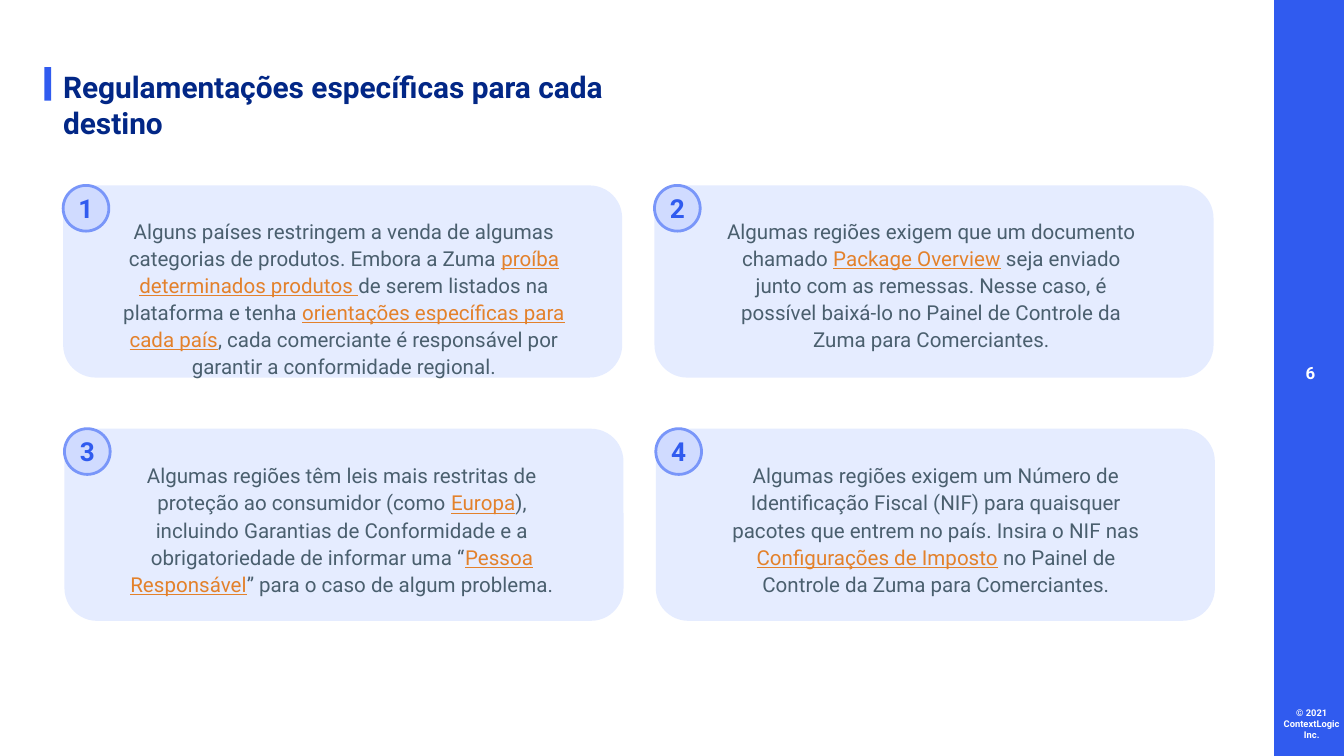
from pptx import Presentation
from pptx.dml.color import RGBColor
from pptx.enum.shapes import MSO_SHAPE
from pptx.enum.text import MSO_ANCHOR, PP_ALIGN
from pptx.util import Inches, Pt

COLORS = {
    "blue": "305BEF",
    "navy": "022786",
    "card": "E5ECFF",
    "badge": "D0DBFF",
    "badge_line": "7996F9",
    "body": "4A5F6E",
    "link": "E3812B",
    "white": "FFFFFF",
}
FONT = "Roboto"
CARD_WIDTH, CARD_HEIGHT = 4.16, 1.43
COLUMN_STEP = 4.4
BADGE_SIZE = 0.34

# Each row: left and top of its first card, top of its texts, and its cards.
# Each card: number, text left, text width, and pieces where every second one is a link.
ROWS = [
    (0.47, 1.38, 1.51, [
        ("1", 0.7, 3.72, [
            "Alguns países restringem a venda de algumas categorias de produtos. Embora a Zuma ",
            "proíba determinados produtos ",
            "de serem listados na plataforma e tenha ",
            "orientações específicas para cada país",
            ", cada comerciante é responsável por garantir a conformidade regional.",
        ]),
        ("2", 5.24, 3.38, [
            "Algumas regiões exigem que um documento chamado ",
            "Package Overview",
            " seja enviado junto com as remessas. Nesse caso, é possível baixá-lo no "
            "Painel de Controle da Zuma para Comerciantes.",
        ]),
    ]),
    (0.48, 3.19, 3.33, [
        ("3", 0.81, 3.47, [
            "Algumas regiões têm leis mais restritas de proteção ao consumidor (como ",
            "Europa",
            "), incluindo Garantias de Conformidade e a obrigatoriedade de informar uma “",
            "Pessoa Responsável",
            "” para o caso de algum problema.",
        ]),
        ("4", 5.23, 3.47, [
            "Algumas regiões exigem um Número de Identificação Fiscal (NIF) para quaisquer "
            "pacotes que entrem no país. Insira o NIF nas ",
            "Configurações de Imposto",
            " no Painel de Controle da Zuma para Comerciantes.",
        ]),
    ]),
]


def rgb(name):
    return RGBColor.from_string(COLORS[name])


def set_font(font, size, color, bold=False):
    font.name = FONT
    font.size = Pt(size)
    font.bold = bold
    font.color.rgb = rgb(color)


def set_margins(frame, left, top, right, bottom):
    frame.margin_left, frame.margin_top = Inches(left), Inches(top)
    frame.margin_right, frame.margin_bottom = Inches(right), Inches(bottom)


def add_filled_shape(slide, kind, left, top, width, height, fill):
    shape = slide.shapes.add_shape(
        kind, Inches(left), Inches(top), Inches(width), Inches(height))
    shape.shadow.inherit = False
    shape.fill.solid()
    shape.fill.fore_color.rgb = rgb(fill)
    shape.line.fill.background()
    return shape


def add_text_frame(slide, left, top, width, height, margins=(0.1, 0.1, 0.1, 0.1)):
    frame = slide.shapes.add_textbox(
        Inches(left), Inches(top), Inches(width), Inches(height)).text_frame
    frame.word_wrap = True
    set_margins(frame, *margins)
    return frame


def add_title(slide, text):
    add_filled_shape(slide, MSO_SHAPE.RECTANGLE, 0.33, 0.5, 0.05, 0.25, "blue")
    title = add_text_frame(slide, 0.47, 0.46, 4.74, 0.34, (0, 0.05, 0, 0)).paragraphs[0]
    title.text = text
    set_font(title.font, 16, "navy", bold=True)


def add_sidebar_text(slide, text, left, top, width, height, size):
    label = add_text_frame(slide, left, top, width, height).paragraphs[0]
    label.text = text
    label.alignment = PP_ALIGN.CENTER
    set_font(label.font, size, "white", bold=True)


def add_sidebar(slide):
    add_filled_shape(slide, MSO_SHAPE.RECTANGLE, 9.48, -0.01, 0.52, 5.66, "blue")
    add_sidebar_text(slide, "6", 9.49, 2.62, 0.52, 0.43, 9)
    add_sidebar_text(slide, "© 2021 ContextLogic Inc.", 9.42, 5.16, 0.68, 0.47, 5)


def add_card_text(slide, left, top, width, pieces):
    paragraph = add_text_frame(slide, left, top, width, 1.2).paragraphs[0]
    paragraph.alignment = PP_ALIGN.CENTER
    paragraph.line_spacing = 1.1
    paragraph.space_after = Pt(8)
    for index, piece in enumerate(pieces):
        is_link = index % 2 == 1
        run = paragraph.add_run()
        run.text = piece
        set_font(run.font, 11, "link" if is_link else "body")
        run.font.underline = is_link


def add_badge(slide, left, top, number):
    badge = add_filled_shape(
        slide, MSO_SHAPE.OVAL, left, top, BADGE_SIZE, BADGE_SIZE, "badge")
    badge.line.color.rgb = rgb("badge_line")
    badge.line.width = Pt(1.5)
    frame = badge.text_frame
    set_margins(frame, 0, 0, 0, 0)
    frame.vertical_anchor = MSO_ANCHOR.MIDDLE
    label = frame.paragraphs[0]
    label.text = number
    label.alignment = PP_ALIGN.CENTER
    set_font(label.font, 14, "blue", bold=True)


def add_card(slide, left, top, text_top, number, text_left, text_width, pieces):
    card = add_filled_shape(
        slide, MSO_SHAPE.ROUNDED_RECTANGLE, left, top, CARD_WIDTH, CARD_HEIGHT, "card")
    card.adjustments[0] = 0.17
    add_card_text(slide, text_left, text_top, text_width, pieces)
    add_badge(slide, left, top, number)


def main():
    presentation = Presentation()
    presentation.slide_width = Inches(10)
    presentation.slide_height = Inches(10) * 9 // 16
    slide = presentation.slides.add_slide(presentation.slide_layouts[6])
    add_sidebar(slide)
    add_title(slide, "Regulamentações específicas para cada destino")
    for row_left, top, text_top, cards in ROWS:
        for column, card in enumerate(cards):
            add_card(slide, row_left + column * COLUMN_STEP, top, text_top, *card)
    presentation.save("out.pptx")


if __name__ == "__main__":
    main()
